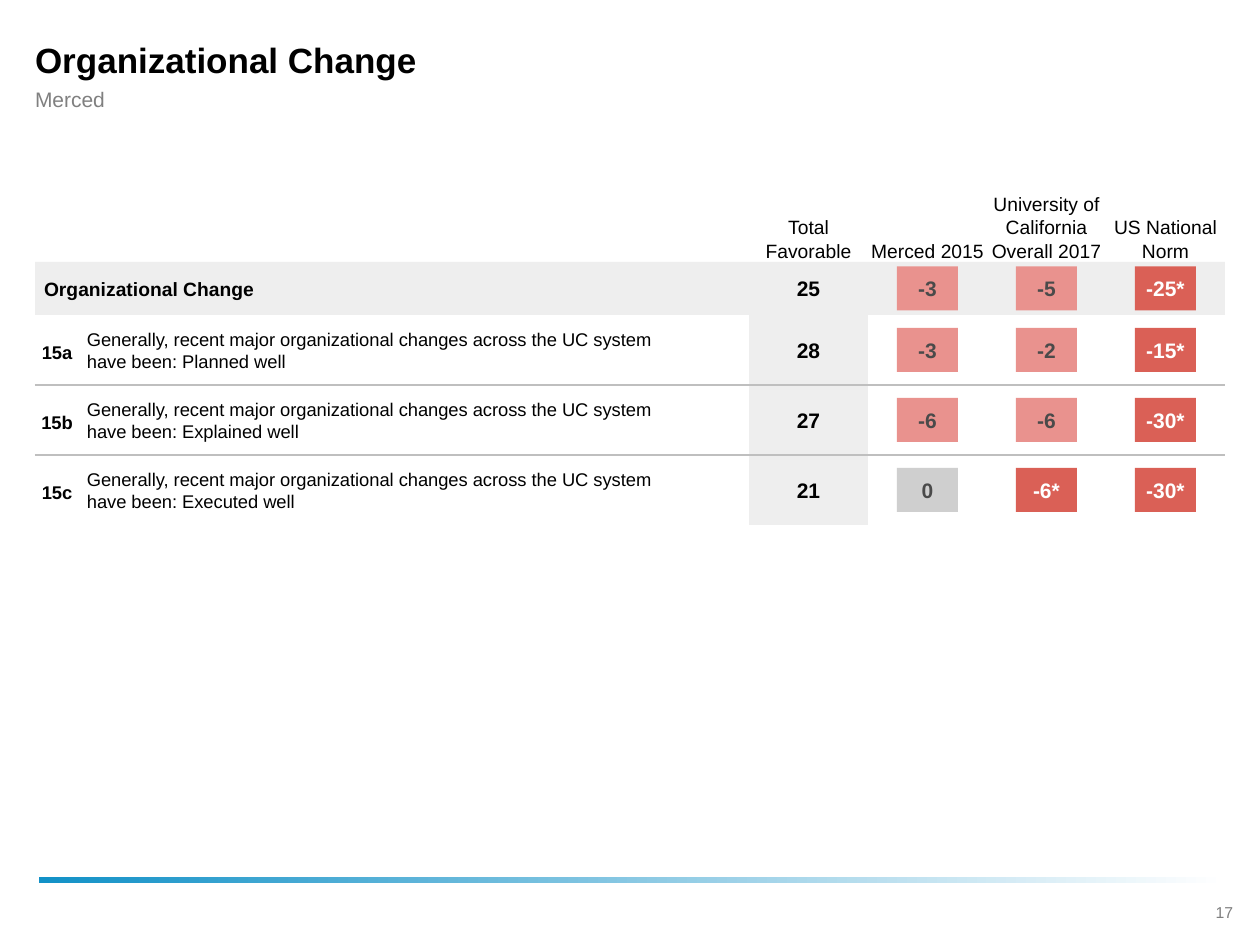
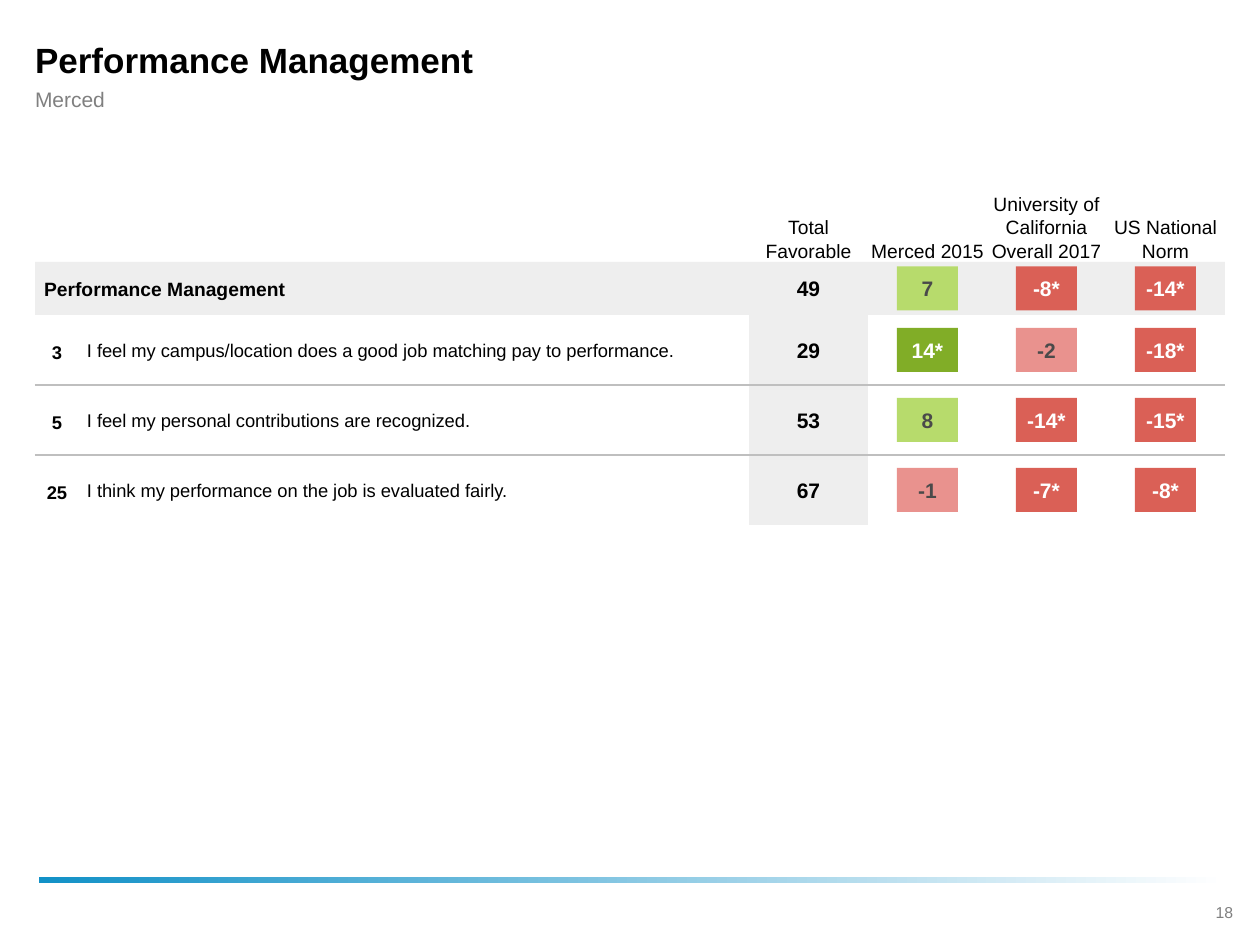
"""Build two survey result slides that compare favorable scores with benchmarks."""
from lxml import etree
from pptx import Presentation
from pptx.dml.color import RGBColor
from pptx.enum.shapes import MSO_CONNECTOR, MSO_SHAPE
from pptx.enum.text import MSO_ANCHOR, PP_ALIGN
from pptx.oxml.ns import qn
from pptx.util import Emu, Pt

LEFT, CENTER = PP_ALIGN.LEFT, PP_ALIGN.CENTER
MIDDLE, BOTTOM, TOP = MSO_ANCHOR.MIDDLE, MSO_ANCHOR.BOTTOM, MSO_ANCHOR.TOP
RECTANGLE, STRAIGHT = MSO_SHAPE.RECTANGLE, MSO_CONNECTOR.STRAIGHT

SUBTITLE = "Merced"
COLUMNS = ["Total Favorable", "Merced 2015", "University of California Overall 2017", "US National Norm"]
CHANGES = "Generally, recent major organizational changes across the UC system have been: "
SLIDES = [
    {
        "page": 17,
        "title": "Organizational Change",
        "total": ["25", "-3", "-5", "-25*"],
        "questions": [
            ("15a", CHANGES + "Planned well", ["28", "-3", "-2", "-15*"]),
            ("15b", CHANGES + "Explained well", ["27", "-6", "-6", "-30*"]),
            ("15c", CHANGES + "Executed well", ["21", "0", "-6*", "-30*"]),
        ],
    },
    {
        "page": 18,
        "title": "Performance Management",
        "total": ["49", "7", "-8*", "-14*"],
        "questions": [
            ("3", "I feel my campus/location does a good job matching pay to performance.",
             ["29", "14*", "-2", "-18*"]),
            ("5", "I feel my personal contributions are recognized.", ["53", "8", "-14*", "-15*"]),
            ("25", "I think my performance on the job is evaluated fairly.", ["67", "-1", "-7*", "-8*"]),
        ],
    },
]

FONT = "Arial"
BLACK, WHITE, DARK = "000000", "FFFFFF", "4A4A4A"
BAND, RULE, BLUE = "EEEEEE", "BFBFBF", "1291C7"
SUBTITLE_GRAY, PAGE_GRAY = "808080", "7F7F7F"
RED, PALE_RED = "DA6056", "E9928E"
GREEN, PALE_GREEN, NEUTRAL = "81AD27", "B7DB6C", "CFCFCF"

EMU_PER_PX = 914400 / 126
MARGIN, CONTENT_WIDTH = 35, 1190
SCORES_LEFT, SCORE_WIDTH = 749, 119
LABEL_TOP, LABEL_HEIGHT = 122, 140
TOTAL_TOP, TOTAL_HEIGHT, ROW_HEIGHT = 262, 53, 70
CHIP_WIDTH, CHIP_HEIGHT = 61, 44
NUMBER_HEIGHT = 24
TITLE_INSETS = (0, 0, 44, 0)


def px(length):
    return Emu(round(length * EMU_PER_PX))


def color(value):
    return RGBColor.from_string(value)


def write(shape, text, size, ink=BLACK, bold=False, align=LEFT, anchor=MIDDLE,
          insets=(0, 0, 0, 0), wrap=True):
    frame = shape.text_frame
    frame.text = text
    frame.word_wrap = wrap
    frame.vertical_anchor = anchor
    frame.margin_left, frame.margin_top, frame.margin_right, frame.margin_bottom = map(px, insets)
    paragraph = frame.paragraphs[0]
    paragraph.alignment = align
    font = paragraph.runs[0].font
    font.name, font.size, font.bold = FONT, Pt(size), bold
    font.color.rgb = color(ink)


def add_text(slide, box, text, size, **style):
    write(slide.shapes.add_textbox(*map(px, box)), text, size, **style)


def add_rectangle(slide, box, fill=None):
    shape = slide.shapes.add_shape(RECTANGLE, *map(px, box))
    shape.shadow.inherit = False
    shape.line.fill.background()
    if fill:
        shape.fill.solid()
        shape.fill.fore_color.rgb = color(fill)
    return shape


def add_rule(slide, y):
    rule = slide.shapes.add_connector(STRAIGHT, px(MARGIN), px(y), px(MARGIN + CONTENT_WIDTH), px(y))
    rule.line.color.rgb = color(RULE)
    rule.line.width = Pt(0.75)
    etree.SubElement(rule._element.spPr, qn("a:effectLst"))


def add_frame(slide, title, page):
    fill = add_rectangle(slide, (39, 877, 1187, 6)).fill
    fill.gradient()
    fill.gradient_angle = 0
    for stop, value in zip(fill.gradient_stops, (BLUE, WHITE)):
        stop.color.rgb = color(value)
    add_text(slide, (1192, 897, 65, 32), str(page), 9, ink=PAGE_GRAY, align=CENTER,
             anchor=TOP, insets=(13, 6, 13, 6))
    add_text(slide, (MARGIN, 35, CONTENT_WIDTH, 48), title, 20, bold=True, insets=TITLE_INSETS)
    add_text(slide, (MARGIN, 86, CONTENT_WIDTH, 26), SUBTITLE, 12, ink=SUBTITLE_GRAY, insets=TITLE_INSETS)


def chip_colors(score):
    significant = score.endswith("*")
    value = int(score.rstrip("*"))
    if value == 0:
        return NEUTRAL, DARK
    strong, pale = (GREEN, PALE_GREEN) if value > 0 else (RED, PALE_RED)
    return (strong, WHITE) if significant else (pale, DARK)


def add_scores(slide, scores, top, height):
    favorable, *differences = scores
    number_top = top + (height - NUMBER_HEIGHT) / 2
    add_text(slide, (SCORES_LEFT, number_top, SCORE_WIDTH, NUMBER_HEIGHT), favorable, 12,
             bold=True, align=CENTER)
    chip_top = top + (height - CHIP_HEIGHT) / 2
    for column, score in enumerate(differences, 1):
        fill, ink = chip_colors(score)
        chip_left = SCORES_LEFT + column * SCORE_WIDTH + (SCORE_WIDTH - CHIP_WIDTH) / 2
        chip = add_rectangle(slide, (chip_left, chip_top, CHIP_WIDTH, CHIP_HEIGHT), fill)
        write(chip, score, 12, ink=ink, bold=True, align=CENTER, insets=(0, 6, 0, 6), wrap=False)


def add_results(slide, title, total, questions):
    rows_top = TOTAL_TOP + TOTAL_HEIGHT
    row_tops = [rows_top + row * ROW_HEIGHT for row in range(len(questions))]
    for top in row_tops:
        add_rectangle(slide, (SCORES_LEFT, top, SCORE_WIDTH, ROW_HEIGHT), BAND)
    for column, label in enumerate(COLUMNS):
        left = SCORES_LEFT + column * SCORE_WIDTH
        add_rectangle(slide, (left, TOTAL_TOP, SCORE_WIDTH, TOTAL_HEIGHT), BAND)
        add_text(slide, (left, LABEL_TOP, SCORE_WIDTH, LABEL_HEIGHT), label, 11,
                 align=CENTER, anchor=BOTTOM)

    heading = add_rectangle(slide, (MARGIN, TOTAL_TOP, SCORES_LEFT - MARGIN, TOTAL_HEIGHT), BAND)
    write(heading, title, 11, bold=True, insets=(9, 0, 9, 0))
    add_scores(slide, total, TOTAL_TOP, TOTAL_HEIGHT)

    for top, (number, statement, scores) in zip(row_tops, questions):
        if top > rows_top:
            add_rule(slide, top)
        add_text(slide, (MARGIN, top + 23, 44, 28), number, 10.5, bold=True, align=CENTER)
        add_text(slide, (78, top + 6, 643, 58), statement, 10.5, insets=(9, 0, 44, 0))
        add_scores(slide, scores, top, ROW_HEIGHT)


def main():
    presentation = Presentation()
    presentation.slide_width, presentation.slide_height = px(1260), px(945)
    for content in SLIDES:
        slide = presentation.slides.add_slide(presentation.slide_layouts[6])
        add_frame(slide, content["title"], content["page"])
        add_results(slide, content["title"], content["total"], content["questions"])
    presentation.save("out.pptx")


if __name__ == "__main__":
    main()
